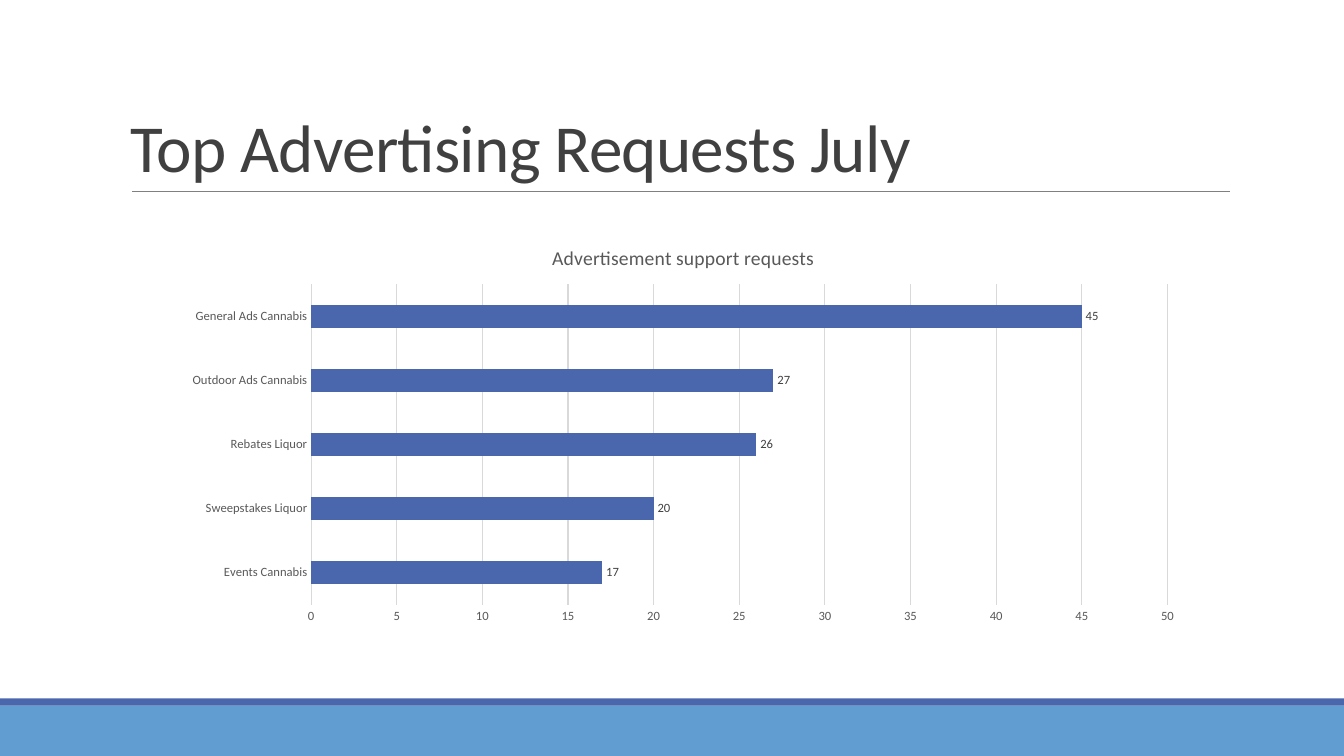
from dataclasses import dataclass

from lxml import etree
from pptx import Presentation
from pptx import util as u
from pptx.chart import data as cd
from pptx.dml.color import RGBColor
from pptx.enum import chart as ch, shapes, text
from pptx.oxml.ns import qn


@dataclass(frozen=True)
class Theme:
    font: str = "Calibri"
    band: str = "629DD1"
    bar: str = "4A66AC"
    rule: str = "808080"
    grid: str = "D9D9D9"
    dark: str = "404040"
    grey: str = "595959"
    head: float = 48
    title: float = 14
    base: float = 10
    label: float = 9


T = Theme()
WIDE, HIGH = 33.87, 19.05
REQUESTS = {
    "Events Cannabis": 17,
    "Sweepstakes Liquor": 20,
    "Rebates Liquor": 26,
    "Outdoor Ads Cannabis": 27,
    "General Ads Cannabis": 45,
}


def cms(*nums):
    return [u.Cm(n) for n in nums]


def style(font, size, color):
    font.name = T.font
    font.size = u.Pt(size)
    font.bold = False
    font.color.rgb = RGBColor.from_string(color)


def stroke(line, color, width):
    line.color.rgb = RGBColor.from_string(color)
    line.width = u.Pt(width)


def footer(slide, box):
    """Broad band with a thin stripe on its top edge."""
    x, y, w, h = box
    edge = 0.18
    for top, tall, color in ((y + edge, h - edge, T.band), (y, edge, T.bar)):
        bar = slide.shapes.add_shape(
            shapes.MSO_SHAPE.RECTANGLE, *cms(x, top, w, tall))
        bar.shadow.inherit = False
        bar.fill.solid()
        bar.fill.fore_color.rgb = RGBColor.from_string(color)
        bar.line.fill.background()


def header(slide, box, words):
    """Title resting on a rule along the foot of the box."""
    x, y, w, h = box
    pad = 0.25
    frame = slide.shapes.add_textbox(*cms(x, y, w, h)).text_frame
    frame.word_wrap = True
    frame.vertical_anchor = text.MSO_ANCHOR.BOTTOM
    para = frame.paragraphs[0]
    para.line_spacing = 0.85
    run = para.add_run()
    run.text = words
    style(run.font, T.head, T.dark)
    run.font._element.set("spc", "-50")

    rule = slide.shapes.add_connector(
        shapes.MSO_CONNECTOR.STRAIGHT,
        *cms(x + 0.28, y + h, x + w - pad, y + h))
    stroke(rule.line, T.rule, 0.5)
    etree.SubElement(rule._element.spPr, qn("a:effectLst"))


def graph(slide, box, words, counts):
    """Horizontal bars with a title and value labels."""
    data = cd.CategoryChartData()
    data.categories = list(counts)
    data.add_series("Series 1", list(counts.values()))
    chart = slide.shapes.add_chart(
        ch.XL_CHART_TYPE.BAR_CLUSTERED, *cms(*box), data).chart
    style(chart.font, T.base, "000000")
    chart.has_legend = False

    # Title
    chart.has_title = True
    run = chart.chart_title.text_frame.paragraphs[0].add_run()
    run.text = words
    style(run.font, T.title, T.grey)
    chart.chart_title.include_in_layout = False

    # Axes
    cat, val = chart.category_axis, chart.value_axis
    for axis in (cat, val):
        axis.major_tick_mark = axis.minor_tick_mark = ch.XL_TICK_MARK.NONE
        style(axis.tick_labels.font, T.label, T.grey)
    stroke(cat.format.line, T.grid, 0.75)
    val.format.line.fill.background()
    val.minimum_scale, val.maximum_scale, val.major_unit = 0, 50, 5
    val.has_major_gridlines = True
    stroke(val.major_gridlines.format.line, T.grid, 0.75)

    # Bars and labels
    plot = chart.plots[0]
    plot.gap_width = 182
    plot.vary_by_categories = False
    bars = plot.series[0]
    bars.format.fill.solid()
    bars.format.fill.fore_color.rgb = RGBColor.from_string(T.bar)
    tags = bars.data_labels
    tags.show_value = True
    tags.position = ch.XL_LABEL_POSITION.OUTSIDE_END
    style(tags.font, T.label, T.dark)


def main():
    deck = Presentation()
    deck.slide_width, deck.slide_height = cms(WIDE, HIGH)
    slide = deck.slides.add_slide(deck.slide_layouts[6])
    footer(slide, (0, 17.6, WIDE, HIGH - 17.6))
    header(slide, (3.05, 0.79, 28.2, 4.04), "Top Advertising Requests July")
    graph(slide, (4.34, 5.72, 25.76, 10.19),
          "Advertisement support requests", REQUESTS)
    deck.save("out.pptx")


if __name__ == "__main__":
    main()
